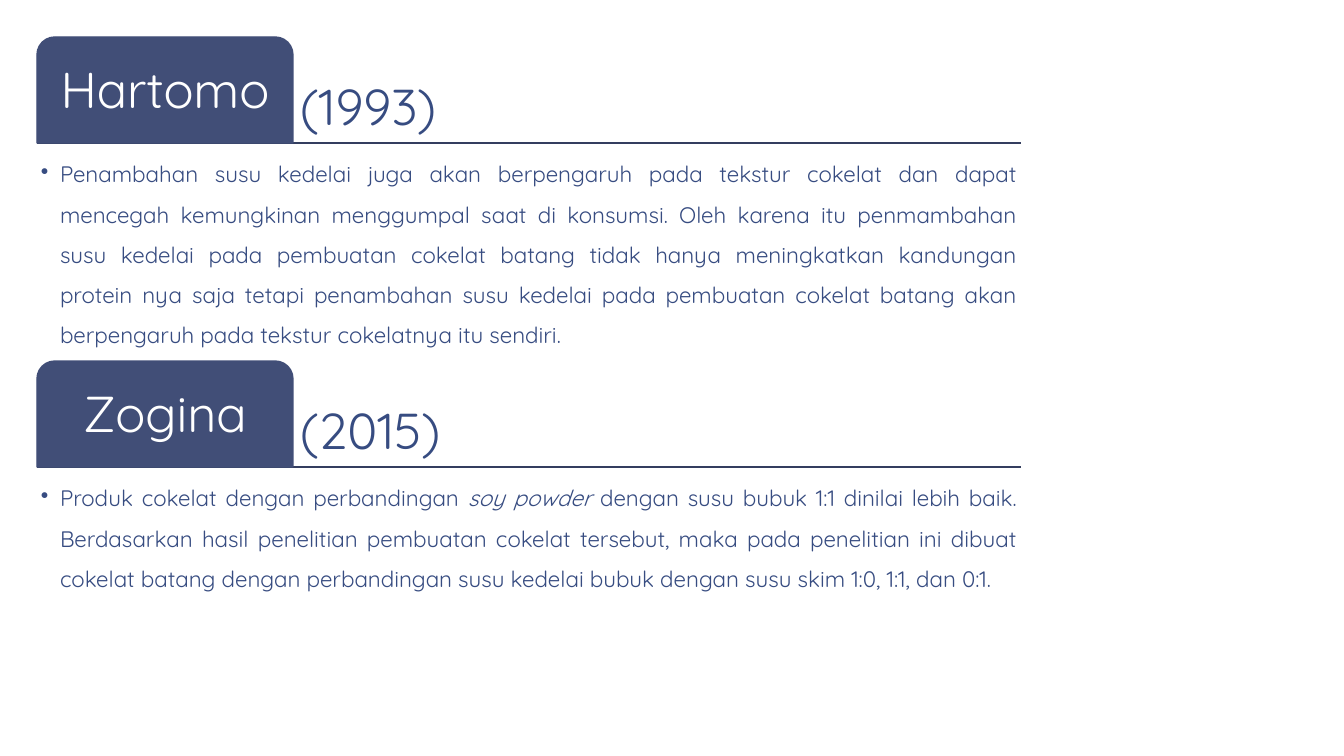
from lxml import etree
from pptx import Presentation
from pptx.dml.color import RGBColor
from pptx.enum.shapes import MSO_CONNECTOR, MSO_SHAPE
from pptx.enum.text import MSO_ANCHOR, PP_ALIGN
from pptx.oxml.ns import qn
from pptx.util import Emu, Pt

LINE = MSO_CONNECTOR.STRAIGHT
TAB = MSO_SHAPE.ROUND_2_SAME_RECTANGLE
TOP, MIDDLE, BOTTOM = MSO_ANCHOR.TOP, MSO_ANCHOR.MIDDLE, MSO_ANCHOR.BOTTOM
LEFT, CENTER, JUSTIFY = PP_ALIGN.LEFT, PP_ALIGN.CENTER, PP_ALIGN.JUSTIFY

SCALE = 914400 / 100.8
FONT = "Quicksand"
COLORS = {"rule": "343E5F", "tab": "414E77", "text": "374C81", "white": "FFFFFF"}

START, WIDTH = 37, 984
TAB_W, TAB_H = 256, 106
BODY_H = 213
FIRST, STEP = 37, 324

STUDIES = [
    ("Hartomo", "(1993)", [
        ("Penambahan susu kedelai juga akan berpengaruh pada tekstur cokelat dan dapat "
         "mencegah kemungkinan menggumpal saat di konsumsi. Oleh karena itu penmambahan "
         "susu kedelai pada pembuatan cokelat batang tidak hanya meningkatkan kandungan "
         "protein nya saja tetapi penambahan susu kedelai pada pembuatan cokelat batang "
         "akan berpengaruh pada tekstur cokelatnya itu sendiri.", False),
    ]),
    ("Zogina", "(2015)", [
        ("Produk cokelat dengan perbandingan ", False),
        ("soy powder", True),
        (" dengan susu bubuk 1:1 dinilai lebih baik. Berdasarkan hasil penelitian "
         "pembuatan cokelat tersebut, maka pada penelitian ini dibuat cokelat batang "
         "dengan perbandingan susu kedelai bubuk dengan susu skim 1:0, 1:1, dan 0:1.", False),
    ]),
]


def px(n):
    return Emu(round(n * SCALE))


def color(name):
    return RGBColor.from_string(COLORS[name])


def add_rule(slide, y):
    rule = slide.shapes.add_connector(LINE, px(START), px(y), px(START + WIDTH), px(y))
    rule.line.color.rgb = color("rule")
    rule.line.width = Pt(1)
    etree.SubElement(rule._element.spPr, qn("a:effectLst"))


def add_tab(slide, y):
    tab = slide.shapes.add_shape(TAB, px(START), px(y), px(TAB_W), px(TAB_H))
    tab.adjustments[0] = 0.167
    tab.adjustments[1] = 0
    tab.shadow.inherit = False
    tab.fill.solid()
    tab.fill.fore_color.rgb = color("tab")
    tab.line.color.rgb = color("tab")
    tab.line.width = Pt(1)


def add_text(slide, box, runs, size, ink, align, anchor, inset, spacing):
    frame = slide.shapes.add_textbox(*map(px, box)).text_frame
    frame.word_wrap = True
    frame.vertical_anchor = anchor
    frame.margin_left = frame.margin_right = px(inset)
    frame.margin_top = frame.margin_bottom = px(inset)
    para = frame.paragraphs[0]
    para.alignment = align
    para.line_spacing = spacing
    for words, slant in runs:
        run = para.add_run()
        run.text = words
        run.font.name = FONT
        run.font.size = Pt(size)
        run.font.italic = slant
        run.font.color.rgb = color(ink)
    return para


def add_bullet(para, indent):
    props = para._p.get_or_add_pPr()
    props.set("marL", str(px(indent)))
    props.set("indent", str(-px(indent)))
    etree.SubElement(props, qn("a:buChar")).set("char", "•")


def add_study(slide, y, name, year, body):
    base = y + TAB_H
    add_rule(slide, base)
    add_text(slide, (START + TAB_W, y, WIDTH - TAB_W, TAB_H), [(year, False)],
             36, "text", LEFT, BOTTOM, 7, 0.9)
    add_tab(slide, y)
    add_text(slide, (START + 5, y + 5, TAB_W - 10, TAB_H - 5), [(name, False)],
             36, "white", CENTER, MIDDLE, 7, 0.9)
    para = add_text(slide, (START, base, WIDTH, BODY_H), body,
                    16, "text", JUSTIFY, TOP, 4, 1.5)
    add_bullet(para, 19)


def main():
    deck = Presentation()
    deck.slide_width, deck.slide_height = px(1344), px(756)
    slide = deck.slides.add_slide(deck.slide_layouts[6])
    for i, study in enumerate(STUDIES):
        add_study(slide, FIRST + i * STEP, *study)
    deck.save("out.pptx")


if __name__ == "__main__":
    main()
